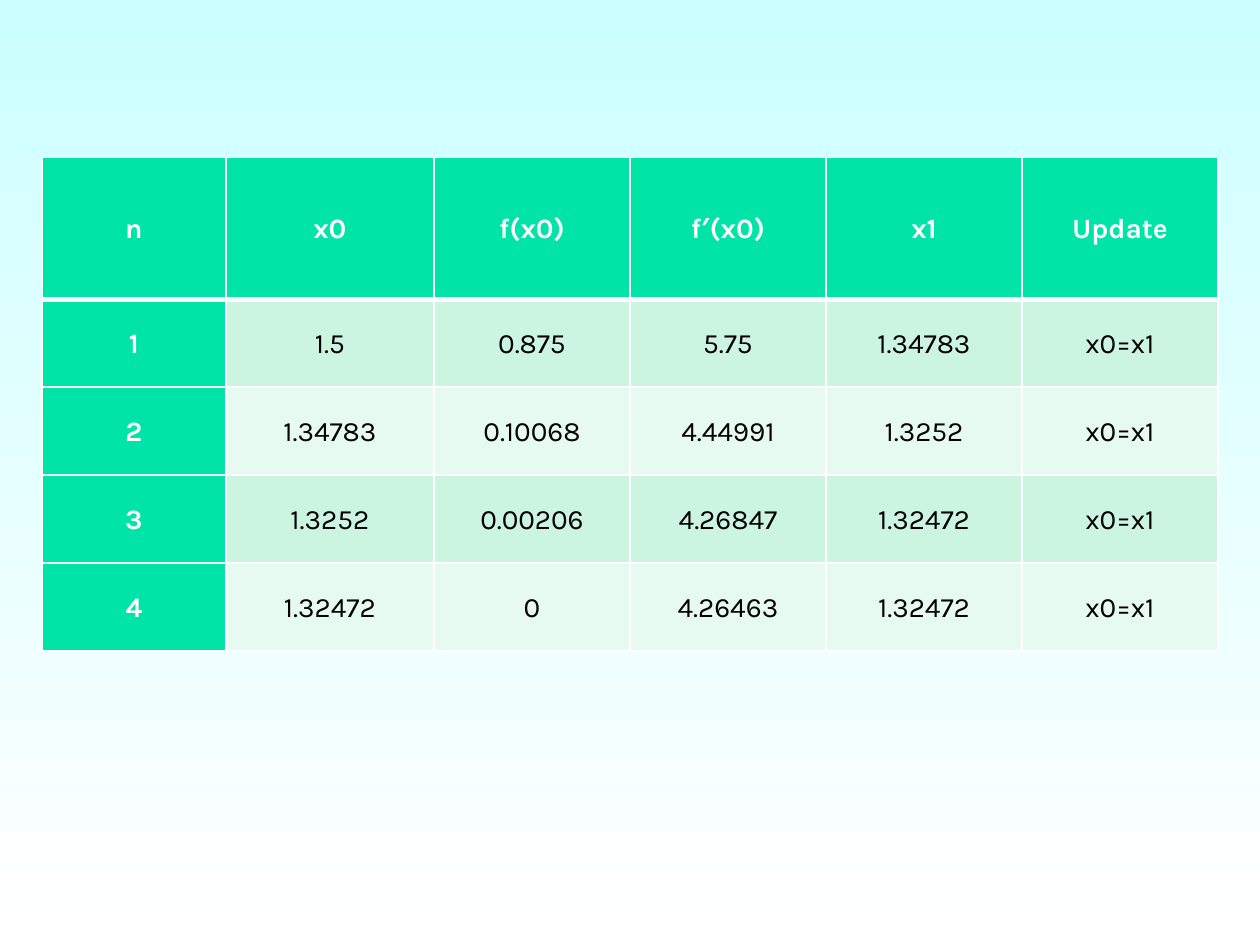
"""Build a slide with a table of Newton's method iterations."""
from dataclasses import dataclass

from lxml.etree import SubElement
from pptx import Presentation
from pptx.dml.color import RGBColor as Color
from pptx.enum.text import MSO_ANCHOR as Anchor, PP_ALIGN as Align
from pptx.oxml.ns import qn
from pptx.slide import Slide
from pptx.table import Table, _Cell as Cell
from pptx.util import Pt


@dataclass(frozen=True)
class Theme:
    font: str = "Karla"
    size: float = 16
    line_spacing: float = 1.07
    margin: float = 3
    thin: float = 1
    thick: float = 3
    sky: str = "CCFFFF"
    white: str = "FFFFFF"
    black: str = "000000"
    heading: str = "00E4A8"
    bands: tuple[str, str] = ("CCF5E1", "E7FAF1")


@dataclass(frozen=True)
class CellStyle:
    fill: str
    color: str
    bold: bool
    borders: dict[str, float]


THEME = Theme()
COLUMN_WIDTHS = (105, 119, 112, 112, 112, 112)
ROW_HEIGHTS = (81, 50.25, 50.25, 50.25, 50.25)
TABLE_LEFT, TABLE_TOP = 24, 90
ITERATIONS = (
    ("n", "x0", "f(x0)", "f′(x0)", "x1", "Update"),
    ("1", "1.5", "0.875", "5.75", "1.34783", "x0=x1"),
    ("2", "1.34783", "0.10068", "4.44991", "1.3252", "x0=x1"),
    ("3", "1.3252", "0.00206", "4.26847", "1.32472", "x0=x1"),
    ("4", "1.32472", "0", "4.26463", "1.32472", "x0=x1"),
)


def style_for(row: int, column: int) -> CellStyle:
    """Choose the look of a cell from its place in the table."""
    heading = row == 0 or column == 0
    borders = {
        "L": THEME.thin,
        "R": THEME.thin,
        "T": THEME.thick if row == 1 else THEME.thin,
        "B": THEME.thick if row == 0 else THEME.thin,
    }
    return CellStyle(
        fill=THEME.heading if heading else THEME.bands[(row - 1) % 2],
        color=THEME.white if heading else THEME.black,
        bold=heading,
        borders=borders,
    )


def draw_borders(cell: Cell, borders: dict[str, float]) -> None:
    """Add white lines to the sides of a cell."""
    properties = cell._tc.get_or_add_tcPr()
    for side, width in borders.items():
        line = SubElement(properties, qn(f"a:ln{side}"), w=str(Pt(width)))
        fill = SubElement(line, qn("a:solidFill"))
        SubElement(fill, qn("a:srgbClr"), val=THEME.white)


def fill_cell(cell: Cell, text: str, style: CellStyle) -> None:
    """Write and format one cell."""
    draw_borders(cell, style.borders)
    cell.fill.solid()
    cell.fill.fore_color.rgb = Color.from_string(style.fill)
    cell.vertical_anchor = Anchor.MIDDLE
    cell.margin_left = cell.margin_right = Pt(THEME.margin)
    cell.margin_top = cell.margin_bottom = Pt(THEME.margin)
    cell.text_frame.text = text
    paragraph = cell.text_frame.paragraphs[0]
    paragraph.alignment = Align.CENTER
    paragraph.line_spacing = THEME.line_spacing
    font = paragraph.runs[0].font
    font.name = THEME.font
    font.size = Pt(THEME.size)
    font.bold = style.bold
    font.color.rgb = Color.from_string(style.color)


def draw_background(slide: Slide) -> None:
    """Fill the slide with a gradient running from top to bottom."""
    fill = slide.background.fill
    fill.gradient()
    fill.gradient_angle = 270
    for stop, color, position in zip(fill.gradient_stops, (THEME.sky, THEME.white), (0, 1)):
        stop.color.rgb = Color.from_string(color)
        stop.position = position


def draw_table(slide: Slide) -> Table:
    """Add the table of iterations."""
    shape = slide.shapes.add_table(
        len(ROW_HEIGHTS), len(COLUMN_WIDTHS), Pt(TABLE_LEFT), Pt(TABLE_TOP),
        Pt(sum(COLUMN_WIDTHS)), Pt(sum(ROW_HEIGHTS)),
    )
    table = shape.table
    table.first_col = True
    for column, width in zip(table.columns, COLUMN_WIDTHS):
        column.width = Pt(width)
    for row, height in zip(table.rows, ROW_HEIGHTS):
        row.height = Pt(height)
    for row, values in enumerate(ITERATIONS):
        for column, text in enumerate(values):
            fill_cell(table.cell(row, column), text, style_for(row, column))
    return table


def main() -> None:
    """Create and save the presentation."""
    presentation = Presentation()
    presentation.slide_width, presentation.slide_height = Pt(720), Pt(540)
    slide = presentation.slides.add_slide(presentation.slide_layouts[6])
    draw_background(slide)
    draw_table(slide)
    presentation.save("out.pptx")


if __name__ == "__main__":
    main()
